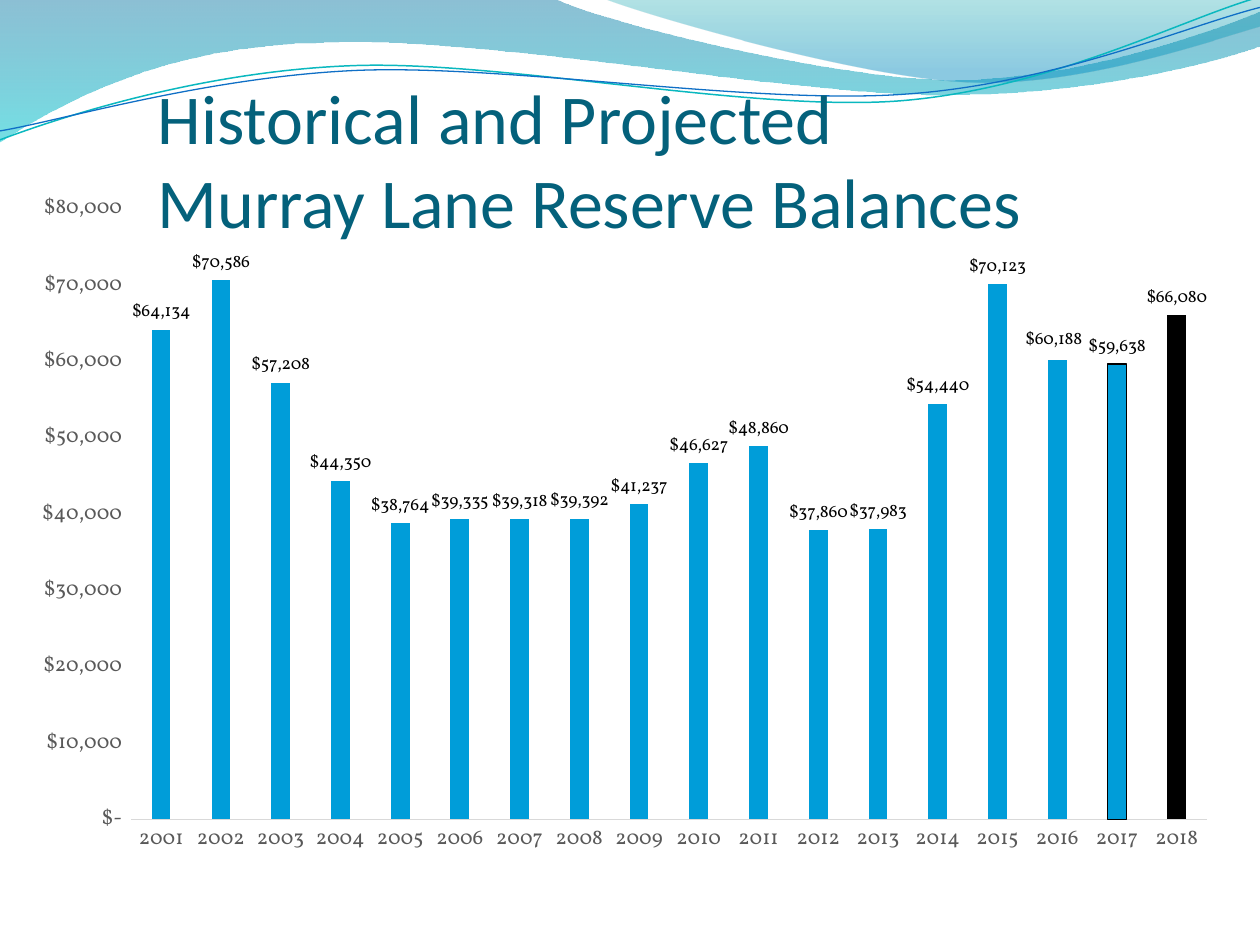
from lxml.etree import SubElement
from pptx import Presentation
from pptx.chart.data import CategoryChartData
from pptx.dml.color import RGBColor
from pptx.enum.chart import XL_CHART_TYPE, XL_LABEL_POSITION, XL_TICK_MARK
from pptx.enum.text import MSO_ANCHOR, MSO_AUTO_SIZE, PP_ALIGN
from pptx.oxml import parse_xml
from pptx.oxml.ns import nsdecls, qn
from pptx.util import Cm, Pt

TITLE_TEAL = RGBColor(0x04, 0x61, 0x7B)
BAR_BLUE = RGBColor(0x00, 0x9D, 0xD9)
BLACK = RGBColor(0x00, 0x00, 0x00)
AXIS_TEXT = RGBColor(0x59, 0x59, 0x59)
AXIS_LINE = RGBColor(0xD9, 0xD9, 0xD9)
DEEP_BLUE = RGBColor(0x00, 0x74, 0xA1)
AQUA = RGBColor(0x00, 0xC6, 0xCF)
TEAL = RGBColor(0x00, 0xA1, 0xA9)
SKY = RGBColor(0x00, 0x8B, 0xBF)
LINE_TEAL = RGBColor(0x0A, 0xB8, 0xBF)
LINE_BLUE = RGBColor(0x0F, 0x6F, 0xC6)
CHART_FONT = "Vollkorn"
DOLLARS = '_("$"* #,##0_);_("$"* \\(#,##0\\);_("$"* "-"_);_(@_)'

prs = Presentation()
prs.slide_width, prs.slide_height = Cm(25.4), Cm(19.05)
slide = prs.slides.add_slide(prs.slide_layouts[5])


def add_wave(start, segments, close):
    """Draw segments in cm: one point is a line, three points a cubic curve."""
    points = [(Cm(x), Cm(y)) for segment in segments for x, y in segment]
    builder = slide.shapes.build_freeform(Cm(start[0]), Cm(start[1]))
    builder.add_line_segments(points, close=close)
    wave = builder.convert_to_shape()
    wave.shadow.inherit = False
    steps = wave.element.spPr.iter(qn("a:lnTo"))
    for segment, group in [(s, [next(steps) for _ in s]) for s in segments]:
        if len(segment) == 3:
            curve = parse_xml(f'<a:cubicBezTo {nsdecls("a")}/>')
            group[0].addprevious(curve)
            for step in group:
                curve.append(step[0])
                step.getparent().remove(step)
    return wave


def style_font(font, size, color, name=CHART_FONT):
    font.size, font.name, font.bold = Pt(size), name, False
    font.color.rgb = color


# Header bands: start, segments, gradient stops (position %, colour, opacity %)
bands = [
    ((0, -0.03), [
        [(11.18, -0.03)],
        [(12.09, 0.43), (16.87, 1.6), (19.25, 1.6)],
        [(21.67, 1.6), (24.33, 0.66), (25.4, 0.23)],
        [(25.43, 0.91)],
        [(24.97, 1.12), (22.1, 1.93), (18.95, 1.91)],
        [(15.8, 1.91), (9.7, 0.71), (6.53, 0.86)],
        [(3.28, 0.89), (1.17, 2.11), (-0.03, 2.87)],
    ], [(0, DEEP_BLUE, 45), (100, AQUA, 55)]),
    ((12.17, -0.03), [
        [(12.93, 0.28), (17.32, 1.57), (19.53, 1.65)],
        [(21.74, 1.75), (24.41, 0.81), (25.4, 0.53)],
        [(25.4, 0)],
    ], [(0, TEAL, 30), (80, SKY, 45)]),
]
for start, segments, stops in bands:
    band = add_wave(start, segments, close=True)
    band.line.fill.background()
    band.fill.gradient()
    band.fill.gradient_angle = 270
    for stop, (_, color, _) in zip(band.fill.gradient_stops, stops):
        stop.color.rgb = color
    for gs, (position, _, opacity) in zip(band.element.spPr.iter(qn("a:gs")), stops):
        gs.set("pos", str(position * 1000))
        SubElement(gs[0], qn("a:alpha")).set("val", str(opacity * 1000))

# Header lines, tilted slightly
strands = [
    ((-0.05, 2.22), [
        [(1.19, 1.82), (4.02, 1.04), (7.05, 1.06)],
        [(10.05, 1.07), (15.02, 2.37), (18.08, 2.29)],
        [(21.13, 2.2), (23.87, 0.91), (25.41, 0.55)],
    ], LINE_TEAL, 0.85),
    ((-0.04, 2.04), [
        [(1.16, 1.9), (4.18, 1.15), (7.2, 1.16)],
        [(10.25, 1.18), (15.13, 2.23), (18.19, 2.16)],
        [(21.21, 2.1), (23.93, 1.06), (25.45, 0.75)],
    ], LINE_BLUE, 0.75),
]
for start, segments, color, width in strands:
    strand = add_wave(start, segments, close=False)
    strand.rotation = 357.3
    strand.fill.background()
    strand.line.color.rgb = color
    strand.line.width = Pt(width)

# Title, brought in front of the header
title = slide.shapes.title
title.left, title.top, title.width, title.height = Cm(3.18), Cm(1.7), Cm(19.89), Cm(3.18)
heading = title.text_frame
heading.text = "Historical and Projected\vMurray Lane Reserve Balances"
heading.auto_size = MSO_AUTO_SIZE.NONE
heading.word_wrap = True
heading.vertical_anchor = MSO_ANCHOR.BOTTOM
heading.margin_left = heading.margin_right = heading.margin_bottom = 0
heading.margin_top = Cm(0.13)
heading.paragraphs[0].alignment = PP_ALIGN.LEFT
for run in heading.paragraphs[0].runs:
    style_font(run.font, 40, TITLE_TEAL, "Calibri")
slide.shapes.element.append(title.element)

# Reserve balances by year
balances = [64134, 70586, 57208, 44350, 38764, 39335, 39318, 39392, 41237,
            46627, 48860, 37860, 37983, 54440, 70123, 60188, 59638, 66080]
years = [str(2001 + i) for i in range(len(balances))]
chart_data = CategoryChartData(number_format=DOLLARS)
chart_data.categories = years
chart_data.add_series("Series 1", balances)
chart = slide.shapes.add_chart(XL_CHART_TYPE.COLUMN_CLUSTERED, Cm(0.53), Cm(3.6),
                               Cm(24.33), Cm(13.76), chart_data).chart
chart.has_legend = False
chart.has_title = False
style_font(chart.font, 10, BLACK)

for axis in (chart.category_axis, chart.value_axis):
    axis.major_tick_mark = axis.minor_tick_mark = XL_TICK_MARK.NONE
    axis.has_major_gridlines = False
    style_font(axis.tick_labels.font, 12, AXIS_TEXT)
chart.category_axis.format.line.color.rgb = AXIS_LINE
chart.category_axis.format.line.width = Pt(0.75)
balance_axis = chart.value_axis
balance_axis.format.line.fill.background()
balance_axis.minimum_scale, balance_axis.maximum_scale = 0, 80000
balance_axis.major_unit = 10000
balance_axis.tick_labels.number_format = DOLLARS
balance_axis.tick_labels.number_format_is_linked = False

plot = chart.plots[0]
plot.gap_width, plot.overlap = 219, -27
plot.vary_by_categories = False
bars = plot.series[0]
bars.invert_if_negative = False
bars.format.fill.solid()
bars.format.fill.fore_color.rgb = BAR_BLUE
for year, color in (("2017", BAR_BLUE), ("2018", BLACK)):
    bar = bars.points[years.index(year)].format
    bar.fill.solid()
    bar.fill.fore_color.rgb = color
current_outline = bars.points[years.index("2017")].format.line
current_outline.color.rgb = BLACK
current_outline.width = Pt(0.75)

labels = bars.data_labels
labels.show_value = True
labels.position = XL_LABEL_POSITION.OUTSIDE_END
labels.number_format = DOLLARS
labels.number_format_is_linked = False
style_font(labels.font, 10, BLACK)

# The 2016 label is nudged away from its neighbour
nudged = bars.points[years.index("2016")].data_label
nudged.position = XL_LABEL_POSITION.OUTSIDE_END
style_font(nudged.font, 10, BLACK)
nudge = parse_xml(f'<c:layout {nsdecls("c")}><c:manualLayout><c:x val="-0.003"/>'
                  '<c:y val="-0.004"/></c:manualLayout></c:layout>')
next(bars.data_labels._element.iter(qn("c:dLbl"))).insert(1, nudge)

plot_area = next(chart.element.iter(qn("c:plotArea"))) if hasattr(chart, "element") else None
for old_layout in plot_area.findall(qn("c:layout")):
    plot_area.remove(old_layout)
plot_area.insert(0, parse_xml(
    f'<c:layout {nsdecls("c")}><c:manualLayout><c:layoutTarget val="inner"/>'
    '<c:xMode val="edge"/><c:yMode val="edge"/><c:x val="0.087"/><c:y val="0.044"/>'
    '<c:w val="0.891"/><c:h val="0.895"/></c:manualLayout></c:layout>'))

prs.save("out.pptx")
